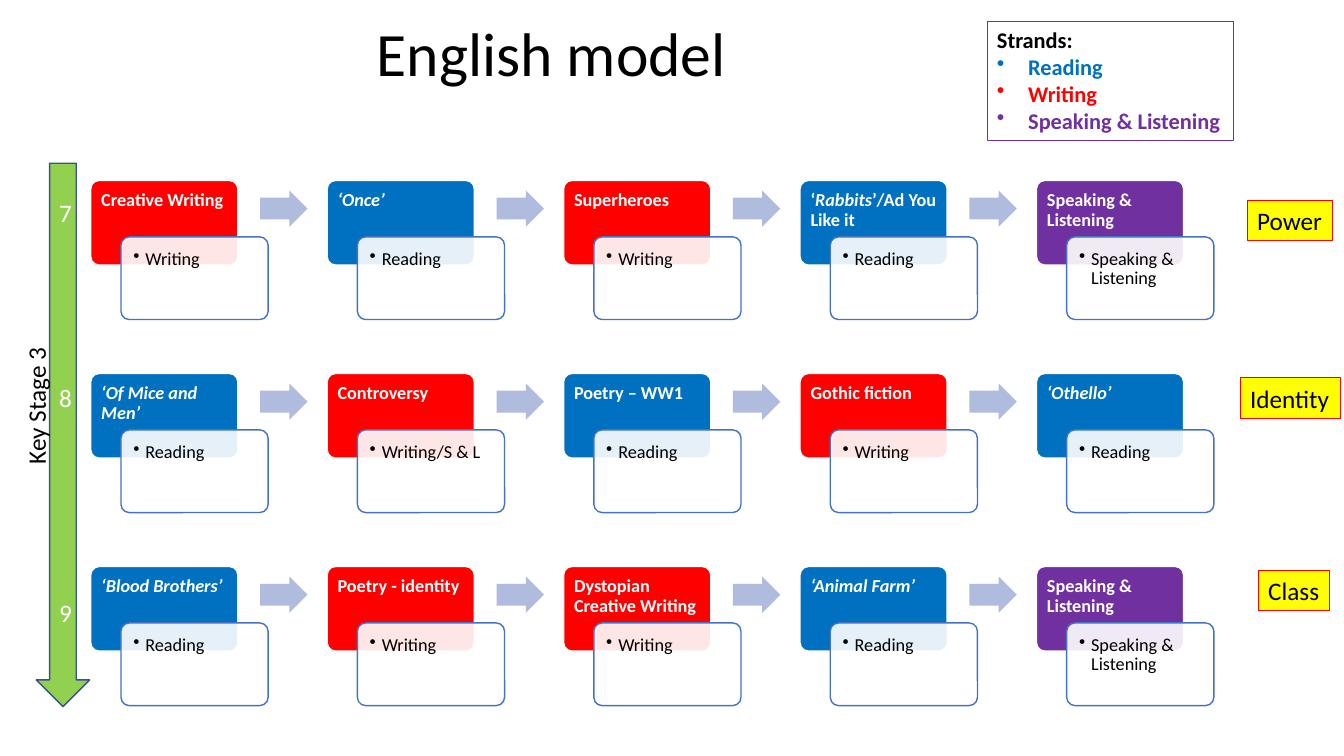
import pptx
import pptx.util
import pptx.dml.color
import pptx.enum.shapes
import pptx.enum.text
import pptx.oxml
import pptx.oxml.ns
from dataclasses import dataclass

Inches, Pt = pptx.util.Inches, pptx.util.Pt
MSO = pptx.enum.shapes.MSO_SHAPE
Anchor = pptx.enum.text.MSO_ANCHOR
Align = pptx.enum.text.PP_ALIGN

TITLE = "English model"
STAGE = "Key Stage 3"
R, W, S = "Reading", "Writing", "Speaking & Listening"

# Each unit: strand that colours it, heading (*italic*), note
UNITS = [
    [(W, "Creative Writing", W), (R, "*‘Once’*", R), (W, "Superheroes", W),
     (R, "‘*Rabbits*’/Ad You Like it", R), (S, S, S)],
    [(R, "*‘Of Mice and Men’*", R), (W, "Controversy", "Writing/S & L"),
     (R, "Poetry – WW1", R), (W, "Gothic fiction", W), (R, "*‘Othello’*", R)],
    [(R, "*‘Blood Brothers’*", R), (W, "Poetry - identity", W),
     (W, "Dystopian Creative Writing", W), (R, "*‘Animal Farm’*", R), (S, S, S)],
]
# Year, lines of space above it
YEARS = [("7", 0), ("8", 5), ("9", 6)]
# Theme word, box
THEMES = [("Power", (12.37, 1.99, 0.85, 0.4)),
          ("Identity", (12.3, 3.75, 1, 0.4)),
          ("Class", (12.48, 5.66, 0.71, 0.4))]


@dataclass
class Theme:
    face = "Calibri"
    white, black = "FFFFFF", "000000"
    edge, step = "4472C4", "B0BCDE"
    green, rim = "92D050", "325491"
    tag, tagrim = "FFFF00", "FF0000"
    strand = {R: "0070C0", W: "FF0000", S: "7030A0"}
    head, body, key, card = 44, 18, 16, 13


X, Y = 0.9, 1.79
DX, DY = 9.38 / 4, 3.83 / 2

deck = pptx.Presentation()
deck.slide_width, deck.slide_height = Inches(13.33), Inches(7.5)
slide = deck.slides.add_slide(deck.slide_layouts[6])


def rgb(hue):
    return pptx.dml.color.RGBColor.from_string(hue)


def shape(kind, box, fill=None, line=None, width=1.0):
    item = slide.shapes.add_shape(kind, *map(Inches, box))
    item.shadow.inherit = False
    if fill:
        item.fill.solid()
        item.fill.fore_color.rgb = rgb(fill)
    else:
        item.fill.background()
    if line:
        item.line.color.rgb = rgb(line)
        item.line.width = Pt(width)
    else:
        item.line.fill.background()
    return item


def frame(item, pads=(0.1, 0.05, 0.1, 0.05), wrap=True, anchor=Anchor.TOP):
    """Set insets (left, top, right, bottom), wrapping and anchor."""
    text = item.text_frame
    text.margin_left, text.margin_top, text.margin_right, text.margin_bottom = map(Inches, pads)
    text.word_wrap = wrap
    text.vertical_anchor = anchor
    return text


def write(para, words, size, hue, bold=False, indent=0, tight=False):
    """Fill a paragraph; parts between asterisks are italic, an indent adds a bullet."""
    if indent:
        props = para._p.get_or_add_pPr()
        props.set("marL", str(Inches(indent)))
        props.set("indent", str(-Inches(indent)))
        mark = pptx.oxml.parse_xml(
            f'<a:buChar {pptx.oxml.ns.nsdecls("a")} char="•"/>')
        props.append(mark)
    para.alignment = Align.LEFT
    font = para.font
    font.name, font.size, font.bold = Theme.face, Pt(size), bold
    font.color.rgb = rgb(hue)
    if tight:
        para.line_spacing = 0.9
    for i, part in enumerate(words.split("*")):
        if part:
            run = para.add_run()
            run.text = part
            if i % 2:
                run.font.italic = True


def label(box, words, size, **opts):
    item = slide.shapes.add_textbox(*map(Inches, box))
    write(frame(item, **opts).paragraphs[0], words, size, Theme.black, tight=size == Theme.head)
    return item


def card(x, y, strand, head, note):
    back = shape(MSO.ROUNDED_RECTANGLE, (x, y, 1.46, 0.84), Theme.strand[strand], Theme.white)
    front = shape(MSO.ROUNDED_RECTANGLE, (x + 0.3, y + 0.56, 1.46, 0.82), Theme.white, Theme.edge)
    back.adjustments[0] = front.adjustments[0] = 0.1
    tint = front.fill._xPr.find(".//" + pptx.oxml.ns.qn("a:srgbClr"))
    tint.append(pptx.oxml.parse_xml(
        f'<a:alpha {pptx.oxml.ns.nsdecls("a")} val="90000"/>'))
    write(frame(back, (0.08, 0.08, 0.08, 0.05)).paragraphs[0],
          head, Theme.card, Theme.white, bold=True, tight=True)
    write(frame(front, (0.1, 0.1, 0.1, 0.1)).paragraphs[0],
          note, Theme.card, Theme.black, indent=0.12, tight=True)


label((3.64, 0.09, 11.5, 0.94), TITLE, Theme.head, anchor=Anchor.MIDDLE)

for row, units in enumerate(UNITS):
    for col, unit in enumerate(units):
        x, y = X + col * DX, Y + row * DY
        card(x, y, *unit)
        if col < len(units) - 1:
            step = shape(MSO.RIGHT_ARROW, (x + 1.68, y + 0.1, 0.47, 0.36), Theme.step)
            step.adjustments[0] = 0.6

legend = frame(shape(MSO.RECTANGLE, (9.79, 0.21, 2.44, 1.18), None, Theme.strand[S], 0.75), wrap=False)
write(legend.paragraphs[0], "Strands:", Theme.key, Theme.black, bold=True)
for name, hue in Theme.strand.items():
    write(legend.add_paragraph(), name, Theme.key, hue, bold=True, indent=0.31)

arrow = shape(MSO.DOWN_ARROW, (0.36, 1.62, 0.53, 5.39), Theme.green, Theme.rim)
years = frame(arrow, (0.05, 0.34, 0, 0))
for i, (year, gap) in enumerate(YEARS):
    para = years.add_paragraph() if i else years.paragraphs[0]
    write(para, year, Theme.body, Theme.white)
    para.alignment = Align.CENTER
    para.space_before = Pt(gap * 22)

label((-0.33, 3.82, 1.37, 0.4), STAGE, Theme.body, wrap=False).rotation = 270

for word, box in THEMES:
    tag = shape(MSO.RECTANGLE, box, Theme.tag, Theme.tagrim, 0.75)
    write(frame(tag, wrap=False).paragraphs[0], word, Theme.body, Theme.black)

deck.save("out.pptx")
